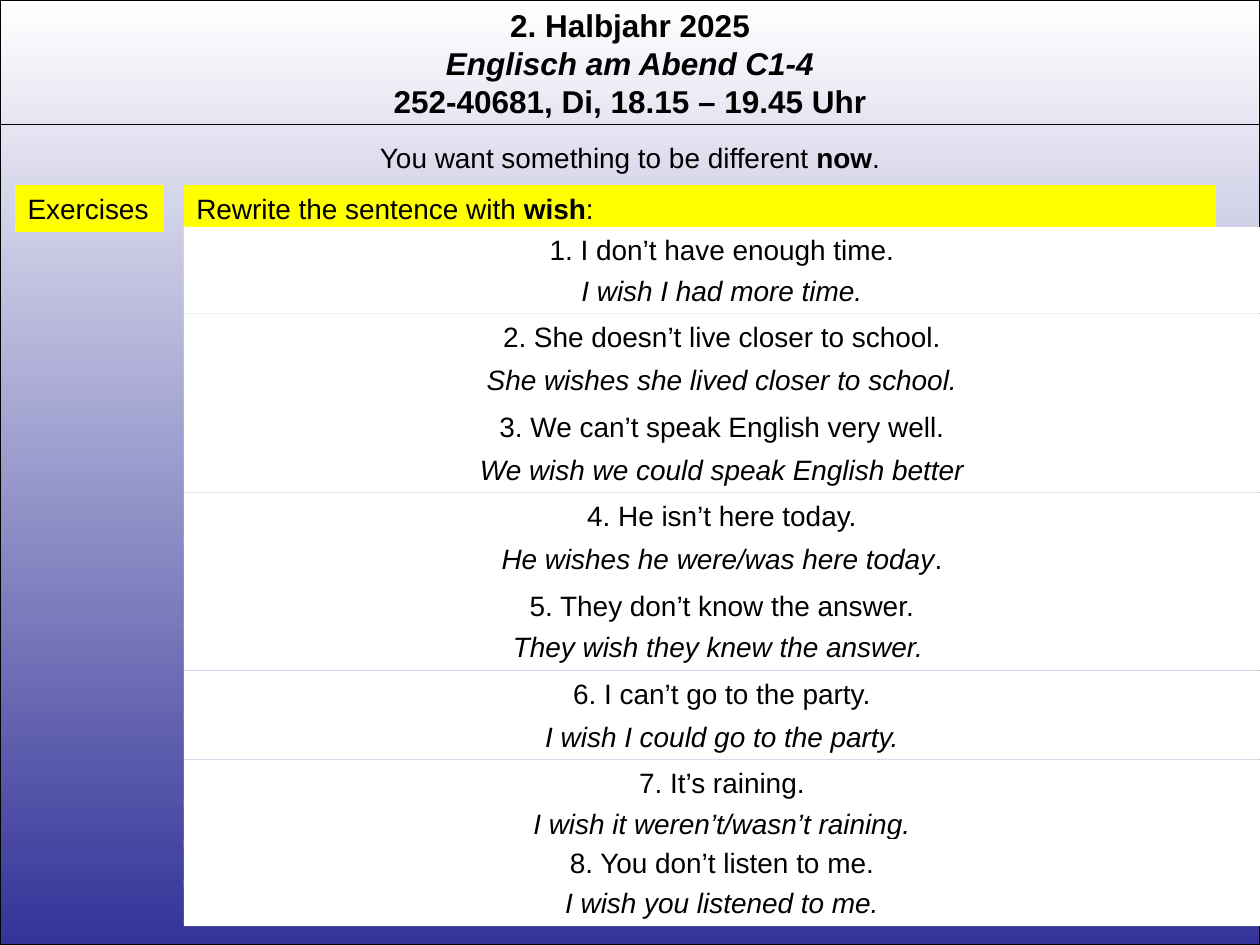
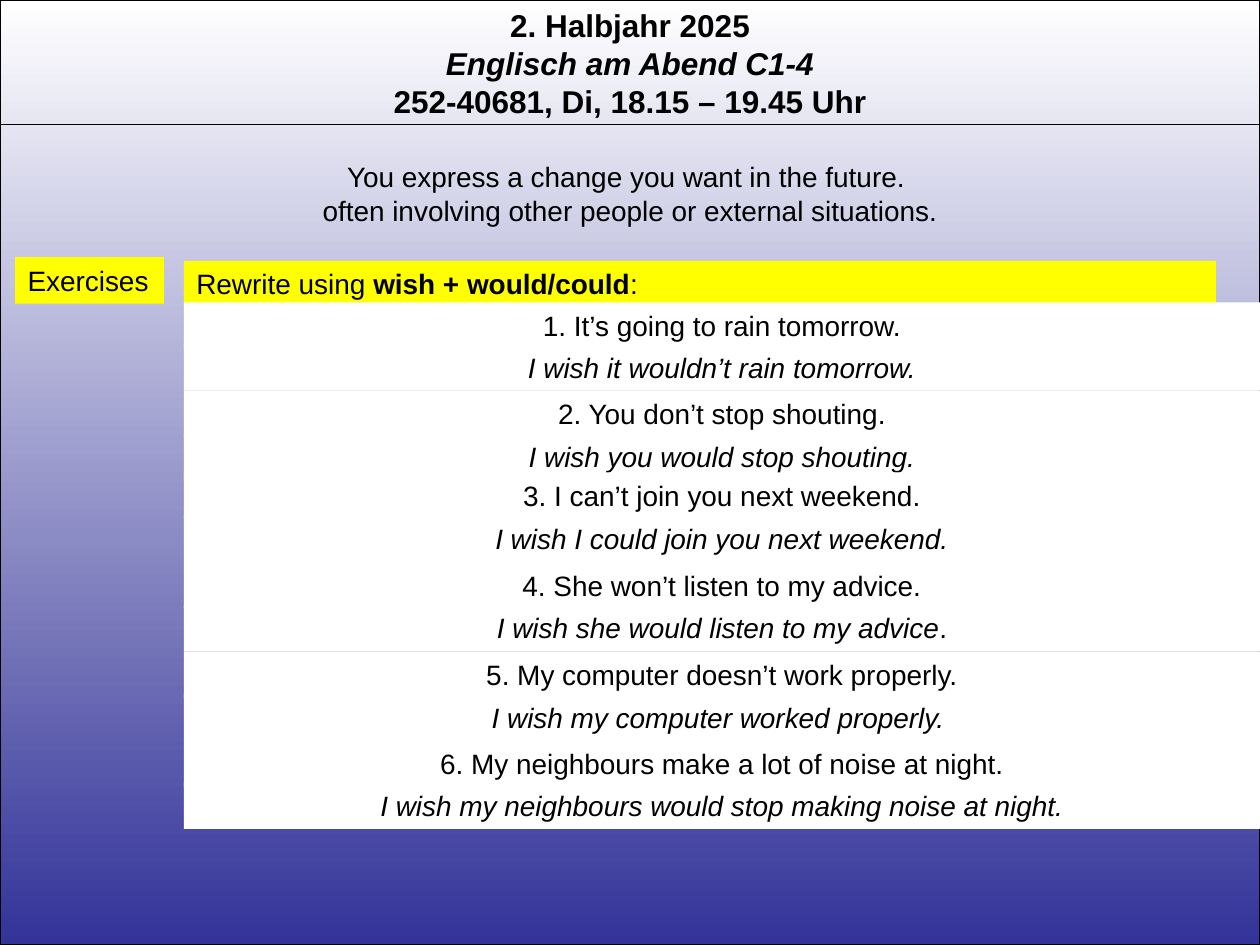
from dataclasses import dataclass

from pptx import Presentation
from pptx.dml.color import RGBColor
from pptx.enum.shapes import MSO_CONNECTOR as Link, MSO_SHAPE as Form
from pptx.enum.text import MSO_ANCHOR as Anchor, MSO_AUTO_SIZE as Fit, PP_ALIGN as Align
from pptx.oxml.ns import qn
from pptx.util import Inches, Pt
from lxml.etree import SubElement

COLORS = {"ink": "000000", "paper": "FFFFFF", "deep": "333399", "mark": "FFFF00"}
FONT = "Arial"
ROW = 0.37
LEFT = 1.46

# A paragraph is a list of (text, style) runs; style holds "b", "i" or both.
HEAD = [
    [("2. Halbjahr 2025", "b")],
    [("Englisch am Abend C1-4", "bi")],
    [("252-40681, Di, 18.15 – 19.45 Uhr", "b")],
]


@dataclass
class Pair:
    """A question and its answer; drop leads to the answer, gap to the next pair."""
    ask: str
    reply: str
    drop: float = 0.34
    gap: float = ROW
    tail: str = ""


NOW = [
    Pair("1. I don’t have enough time.", "I wish I had more time.", drop=0.32),
    Pair("2. She doesn’t live closer to school.", "She wishes she lived closer to school."),
    Pair("3. We can’t speak English very well.", "We wish we could speak English better"),
    Pair("4. He isn’t here today.", "He wishes he were/was here today", tail="."),
    Pair("5. They don’t know the answer.", "They wish they knew the answer. ", drop=0.33),
    Pair("6. I can’t go to the party.", "I wish I could go to the party."),
    Pair("7. It’s raining.", "I wish it weren’t/wasn’t raining.", drop=0.32, gap=0.31),
    Pair("8. You don’t listen to me.", "I wish you listened to me.", drop=0.32),
]
FUTURE = [
    Pair("1. It’s going to rain tomorrow.", "I wish it wouldn’t rain tomorrow.", drop=0.33),
    Pair("2. You don’t stop shouting.", "I wish you would stop shouting.", gap=0.31),
    Pair("3. I can’t join you next weekend.", "I wish I could join you next weekend."),
    Pair("4. She won’t listen to my advice.", "I wish she would listen to my advice", tail="."),
    Pair("5. My computer doesn’t work properly.", "I wish my computer worked properly. "),
    Pair("6. My neighbours make a lot of noise at night.",
         "I wish my neighbours would stop making noise at night.", drop=0.33),
]


def color(name):
    return RGBColor.from_string(COLORS[name])


def place(*box):
    return [Inches(n) for n in box]


def write(shape, paras, size=16, align=Align.CENTER, ink="ink"):
    frame = shape.text_frame
    frame.word_wrap = True
    frame.auto_size = Fit.SHAPE_TO_FIT_TEXT
    frame.vertical_anchor = Anchor.TOP
    for num, runs in enumerate(paras):
        para = frame.add_paragraph() if num else frame.paragraphs[0]
        para.alignment = align
        for text, style in runs:
            run = para.add_run()
            run.text = text
            font = run.font
            font.name, font.size = FONT, Pt(size)
            font.bold, font.italic = "b" in style, "i" in style
            font.color.rgb = color(ink)


def add_bar(slide, box, fill, runs, align=Align.CENTER):
    bar = slide.shapes.add_shape(Form.RECTANGLE, *place(*box))
    bar.shadow.inherit = False
    bar.fill.solid()
    bar.fill.fore_color.rgb = color(fill)
    bar.line.fill.background()
    write(bar, [runs], align=align)


def add_wash(slide):
    """Lay the framed gradient behind everything else."""
    wash = slide.shapes.add_shape(Form.RECTANGLE, *place(0, 0, 10, 7.5))
    wash.shadow.inherit = False
    wash.fill.gradient()
    wash.fill.gradient_angle = 270
    for stop, name in zip(wash.fill.gradient_stops, ("paper", "deep")):
        stop.color.rgb = color(name)
    wash.line.color.rgb = color("ink")
    wash.line.width = Pt(0.75)
    slide.shapes._spTree.insert(2, wash._element)


def add_rule(slide, top):
    rule = slide.shapes.add_connector(Link.STRAIGHT, *place(0, top, 10, top))
    rule.line.color.rgb = color("ink")
    rule.line.width = Pt(0.75)
    SubElement(rule._element.spPr, qn("a:effectLst"))


def add_head(slide):
    add_wash(slide)
    title = slide.shapes.title
    title.left, title.top, title.width, title.height = place(0, 0, 10, 1.01)
    write(title, HEAD, size=18)
    add_rule(slide, 0.99)


def add_pairs(slide, top, pairs):
    for pair in pairs:
        add_bar(slide, (LEFT, top, 8.54, ROW), "paper", [(pair.ask, "")])
        top += pair.drop
        runs = [(pair.reply, "i")]
        if pair.tail:
            runs.append((pair.tail, ""))
        add_bar(slide, (LEFT, top, 8.54, ROW), "paper", runs)
        top += pair.gap


def add_drill(deck, intro, box, tag, top, task, pairs):
    """Add one exercise slide: intro, yellow labels, questions with answers."""
    slide = deck.slides.add_slide(deck.slide_layouts[5])
    add_head(slide)
    add_bar(slide, (0.12, tag, 1.18, ROW), "mark", [("Exercises", "")], Align.LEFT)
    add_bar(slide, (LEFT, top, 8.19, ROW), "mark", task, Align.LEFT)
    add_pairs(slide, top + 0.33, pairs)
    write(slide.shapes.add_textbox(*place(*box)), intro)


def main():
    deck = Presentation()
    deck.slide_width, deck.slide_height = place(10, 7.5)
    add_drill(
        deck,
        [[("You want something to be different ", ""), ("now", "b"), (".", "")]],
        (0, 1.07, 10, ROW), 1.47, 1.47,
        [("Rewrite the sentence with ", ""), ("wish", "b"), (":", "")],
        NOW,
    )
    add_drill(
        deck,
        [[("You express a change you want in the future. ", "")],
         [("often involving other people or external situations.", "")]],
        (0, 1.22, 10, 0.64), 2.04, 2.07,
        [("Rewrite using ", ""), ("wish + would/could", "b"), (":", "")],
        FUTURE,
    )
    deck.save("out.pptx")


if __name__ == "__main__":
    main()
